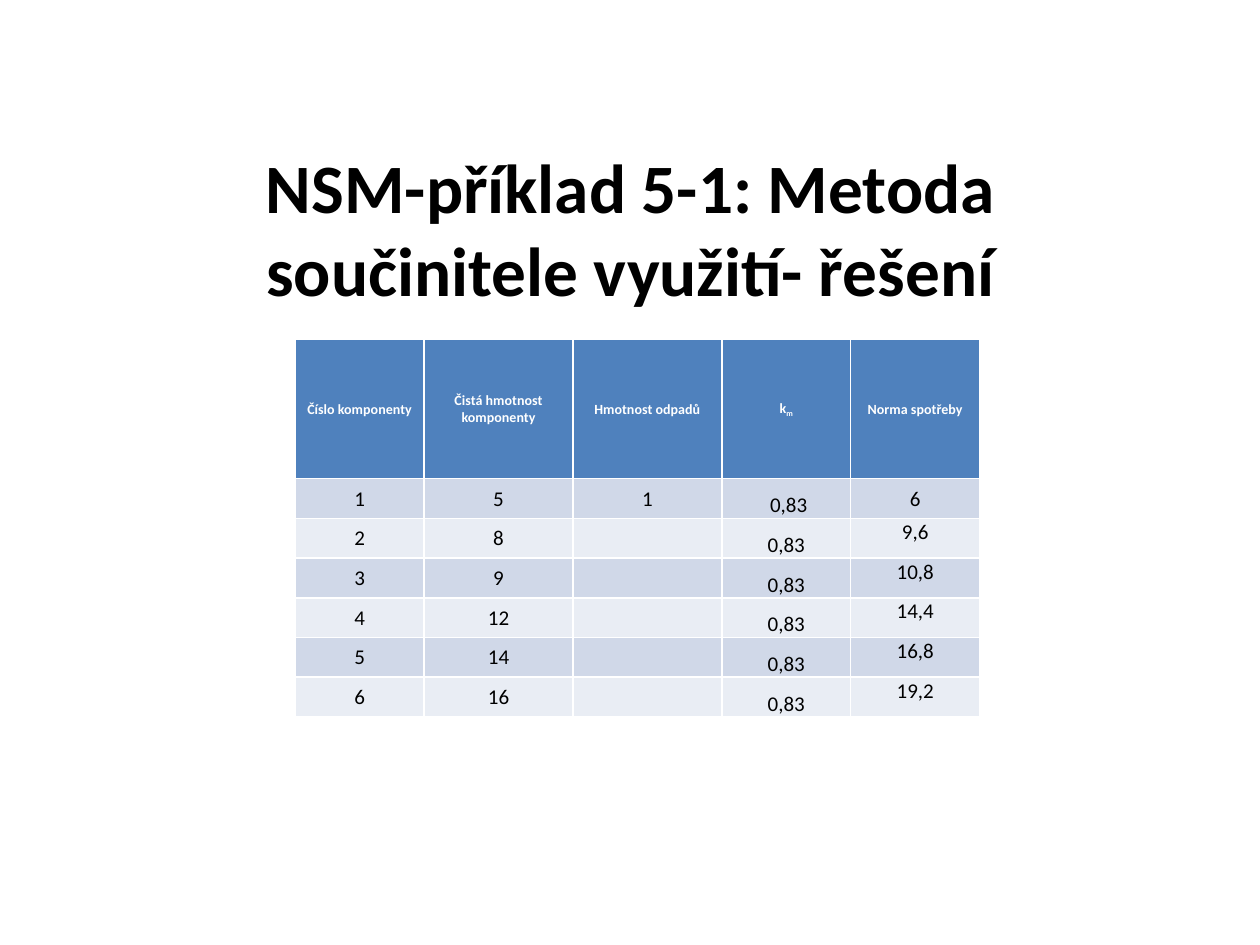
from pptx import Presentation
from pptx.dml.color import RGBColor
from pptx.enum.text import MSO_ANCHOR, PP_ALIGN
from pptx.util import Cm, Pt

COLORS = {
    "title": "000000",
    "header": "4F81BD",
    "header_text": "FFFFFF",
    "odd": "D0D8E8",
    "even": "E9EDF4",
    "text": "000000",
}
FONT = "Calibri"
HEADER = ["Číslo komponenty", "Čistá hmotnost komponenty", "Hmotnost odpadů",
          "k", "Norma spotřeby"]
ROWS = [
    ["1", "5", "1", " 0,83", "6"],
    ["2", "8", "", "0,83", "9,6"],
    ["3", "9", "", "0,83", "10,8"],
    ["4", "12", "", "0,83", "14,4"],
    ["5", "14", "", "0,83", "16,8"],
    ["6", "16", "", "0,83", "19,2"],
]
COL_WIDTHS = [2.6, 3, 3, 2.6, 2.6]
HEADER_HEIGHT, ROW_HEIGHT = 2.82, 0.8
COEFFICIENT_COL, NORM_COL = 3, 4


def format_paragraph(p, size, color, bold):
    p.alignment = PP_ALIGN.CENTER
    p.font.name = FONT
    p.font.size = Pt(size)
    p.font.bold = bold
    p.font.color.rgb = RGBColor.from_string(COLORS[color])


def add_title(s, text):
    sp = s.shapes.title
    sp.left, sp.top, sp.width, sp.height = Cm(4.14), Cm(3.38), Cm(17.15), Cm(2.39)
    tf = sp.text_frame
    tf.text = text
    tf.word_wrap = True
    tf.vertical_anchor = MSO_ANCHOR.MIDDLE
    format_paragraph(tf.paragraphs[0], 39.6, "title", True)


def fill_cell(cell, text, fill, anchor, size, color, bold):
    cell.fill.solid()
    cell.fill.fore_color.rgb = RGBColor.from_string(COLORS[fill])
    cell.margin_left = cell.margin_right = cell.margin_top = Cm(0.02)
    cell.margin_bottom = 0
    cell.vertical_anchor = anchor
    p = cell.text_frame.paragraphs[0]
    if text:
        p.add_run().text = text
    format_paragraph(p, size, color, bold)


def add_subscript(p, text):
    r = p.add_run()
    r.text = text
    r._r.get_or_add_rPr().set("baseline", "-25000")


def body_anchor(row, col):
    if col == COEFFICIENT_COL:
        return MSO_ANCHOR.BOTTOM
    if col == NORM_COL and row > 1:
        return MSO_ANCHOR.TOP
    return MSO_ANCHOR.MIDDLE


def add_norm_table(s):
    height = HEADER_HEIGHT + ROW_HEIGHT * len(ROWS)
    table = s.shapes.add_table(len(ROWS) + 1, len(HEADER), Cm(5.95), Cm(6.83),
                               Cm(sum(COL_WIDTHS)), Cm(height)).table
    for column, width in zip(table.columns, COL_WIDTHS):
        column.width = Cm(width)
    for row in table.rows:
        row.height = Cm(ROW_HEIGHT)
    table.rows[0].height = Cm(HEADER_HEIGHT)
    for col, text in enumerate(HEADER):
        fill_cell(table.cell(0, col), text, "header", MSO_ANCHOR.MIDDLE,
                  8, "header_text", True)
    add_subscript(table.cell(0, COEFFICIENT_COL).text_frame.paragraphs[0], "m")
    for row, values in enumerate(ROWS, start=1):
        for col, text in enumerate(values):
            fill_cell(table.cell(row, col), text, "odd" if row % 2 else "even",
                      body_anchor(row, col), 12, "text", False)


def main():
    prs = Presentation()
    prs.slide_width, prs.slide_height = Cm(25.4), Cm(19.05)
    s = prs.slides.add_slide(prs.slide_layouts[5])
    add_title(s, "NSM-příklad 5-1: Metoda součinitele využití- řešení")
    add_norm_table(s)
    prs.save("out.pptx")


if __name__ == "__main__":
    main()
